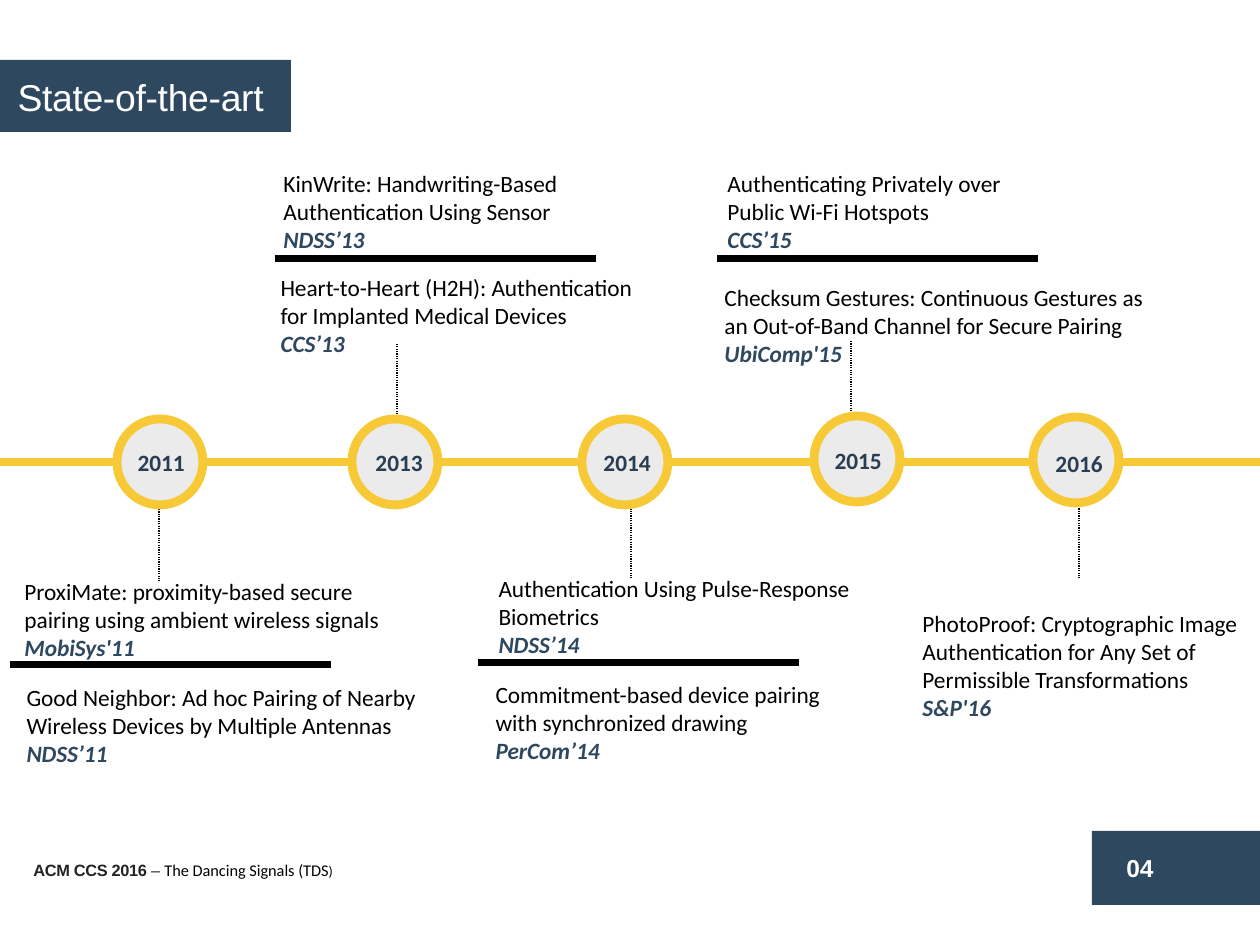
from lxml import etree
from pptx import Presentation
from pptx import util as u
from pptx.dml.color import RGBColor
from pptx.enum import dml, shapes, text
from pptx.oxml import ns

PX = 914400 / 168
NAVY, YELLOW, BLACK, WHITE = "2E4860", "F8C937", "000000", "FFFFFF"
CIRCLE, STEM, YEAR_WIDTH, YEAR_HEIGHT = 86, 72, 92, 45

# year, circle centre x and y, label centre x and top, stem x and top
YEARS = [
    ("2011", 160, 462, 161, 440, 159, 509),
    ("2013", 395, 462, 399, 440, 397, 344),
    ("2014", 625, 462, 627, 440, 631, 506),
    ("2015", 857, 459, 858, 438, 851, 341),
    ("2016", 1076, 460, 1079, 441, 1079, 506),
]

# left, top, width, height, title, venue
PAPERS = [
    (267, 161, 343, 103, "KinWrite: Handwriting-Based Authentication Using Sensor", "NDSS’13"),
    (264, 265, 408, 103, "Heart-to-Heart (H2H): Authentication for Implanted Medical Devices", "CCS’13"),
    (711, 161, 306, 103, "Authenticating Privately over Public Wi-Fi Hotspots", "CCS’15"),
    (708, 275, 465, 103, "Checksum Gestures: Continuous Gestures as an Out-of-Band Channel for Secure Pairing",
     "UbiComp'15"),
    (8, 569, 391, 103, "ProxiMate: proximity-based secure pairing using ambient wireless signals", "MobiSys'11"),
    (10, 675, 460, 103, "Good Neighbor: Ad hoc Pairing of Nearby Wireless Devices by Multiple Antennas",
     "NDSS’11"),
    (482, 566, 467, 103, "Authentication Using Pulse-Response Biometrics", "NDSS’14"),
    (479, 672, 373, 103, "Commitment-based device pairing with synchronized drawing", "PerCom’14"),
    (906, 601, 354, 130, "PhotoProof: Cryptographic Image Authentication for Any Set of Permissible Transformations",
     "S&P'16"),
]

# left end and height of the bars between two papers of one year
BARS = [(275, 259), (717, 259), (10, 665), (478, 663)]
BAR_LENGTH = 321


def px(value):
    return u.Emu(round(value * PX))


def colour(value):
    return RGBColor.from_string(value)


def add_line(page, x1, y1, x2, y2, hue, weight, dotted=False):
    line = page.shapes.add_connector(shapes.MSO_CONNECTOR.STRAIGHT, px(x1), px(y1), px(x2), px(y2))
    line.line.color.rgb = colour(hue)
    line.line.width = u.Pt(weight)
    if dotted:
        line.line.dash_style = dml.MSO_LINE.ROUND_DOT
    etree.SubElement(line._element.spPr, ns.qn("a:effectLst"))


def add_block(page, kind, left, top, width, height, fill, outline=None, weight=0):
    block = page.shapes.add_shape(kind, px(left), px(top), px(width), px(height))
    block.shadow.inherit = False
    block.fill.solid()
    block.fill.fore_color.rgb = colour(fill)
    if outline:
        block.line.color.rgb = colour(outline)
        block.line.width = u.Pt(weight)
    else:
        block.line.fill.background()


def add_box(page, left, top, width, height):
    box = page.shapes.add_textbox(px(left), px(top), px(width), px(height))
    box.text_frame.word_wrap = True
    box.text_frame.auto_size = text.MSO_AUTO_SIZE.SHAPE_TO_FIT_TEXT
    return box.text_frame


def add_span(para, words, size, hue, font="Calibri", bold=False, italic=False, spacing=0):
    span = para.add_run()
    span.text = words
    span.font.name = font
    span.font.size = u.Pt(size)
    span.font.bold = bold
    span.font.italic = italic
    span.font.color.rgb = colour(hue)
    if spacing:
        span._r.get_or_add_rPr().set("spc", str(spacing))


def add_year(page, year, x, y, label_x, label_top, stem_x, stem_top):
    add_line(page, stem_x, stem_top, stem_x, stem_top + STEM, BLACK, 0.5, dotted=True)
    add_block(page, shapes.MSO_SHAPE.OVAL, x - CIRCLE / 2, y - CIRCLE / 2, CIRCLE, CIRCLE,
              "EBEBEB", YELLOW, 3.8)
    box = add_box(page, label_x - YEAR_WIDTH / 2, label_top, YEAR_WIDTH, YEAR_HEIGHT)
    para = box.paragraphs[0]
    para.alignment = text.PP_ALIGN.CENTER
    add_span(para, year, 10, "293D53", bold=True)


def add_paper(page, left, top, width, height, title, venue):
    box = add_box(page, left, top, width, height)
    add_span(box.paragraphs[0], title, 10, BLACK)
    add_span(box.add_paragraph(), venue, 10, NAVY, bold=True, italic=True)


def add_heading(page):
    add_block(page, shapes.MSO_SHAPE.RECTANGLE, 0, 60, 291, 72, NAVY)
    box = add_box(page, 1, 66, 330, 62)
    add_span(box.paragraphs[0], "State-of-the-art", 16, WHITE, "Arial", spacing=-10)


def add_footer(page):
    para = add_box(page, 17, 852, 406, 37).paragraphs[0]
    add_span(para, "ACM CCS 2016 ", 7, "232323", "Arial", bold=True, spacing=-10)
    add_span(para, "– ", 7, "232323", "Arial", spacing=-10)
    add_span(para, "The Dancing Signals (TDS", 7, BLACK)
    add_span(para, ")", 6, BLACK)
    add_block(page, shapes.MSO_SHAPE.RECTANGLE, 1092, 831, 168, 74, NAVY)
    number = add_box(page, 1110, 845, 64, 47)
    add_span(number.paragraphs[0], "04", 10.5, WHITE, "Arial", bold=True)


def main():
    deck = Presentation()
    deck.slide_width, deck.slide_height = px(1260), px(945)
    page = deck.slides.add_slide(deck.slide_layouts[6])

    # Timeline
    add_line(page, 0, 462, 1260, 462, YELLOW, 3.5)
    for year in YEARS:
        add_year(page, *year)

    # Papers and the bars between them
    for paper in PAPERS:
        add_paper(page, *paper)
    for left, y in BARS:
        add_line(page, left, y, left + BAR_LENGTH, y, BLACK, 3)

    # Heading and footer
    add_heading(page)
    add_footer(page)
    deck.save("out.pptx")


if __name__ == "__main__":
    main()
